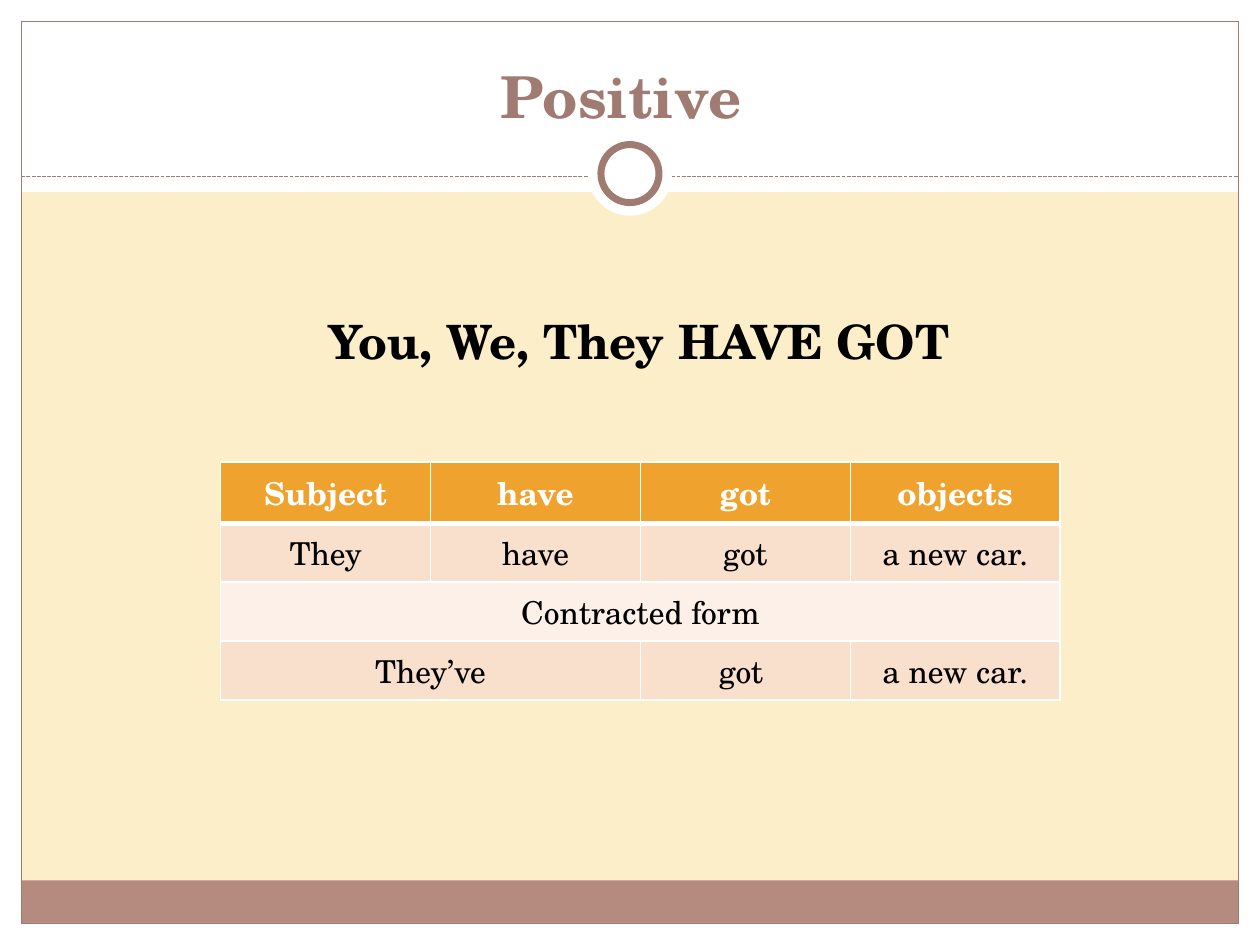
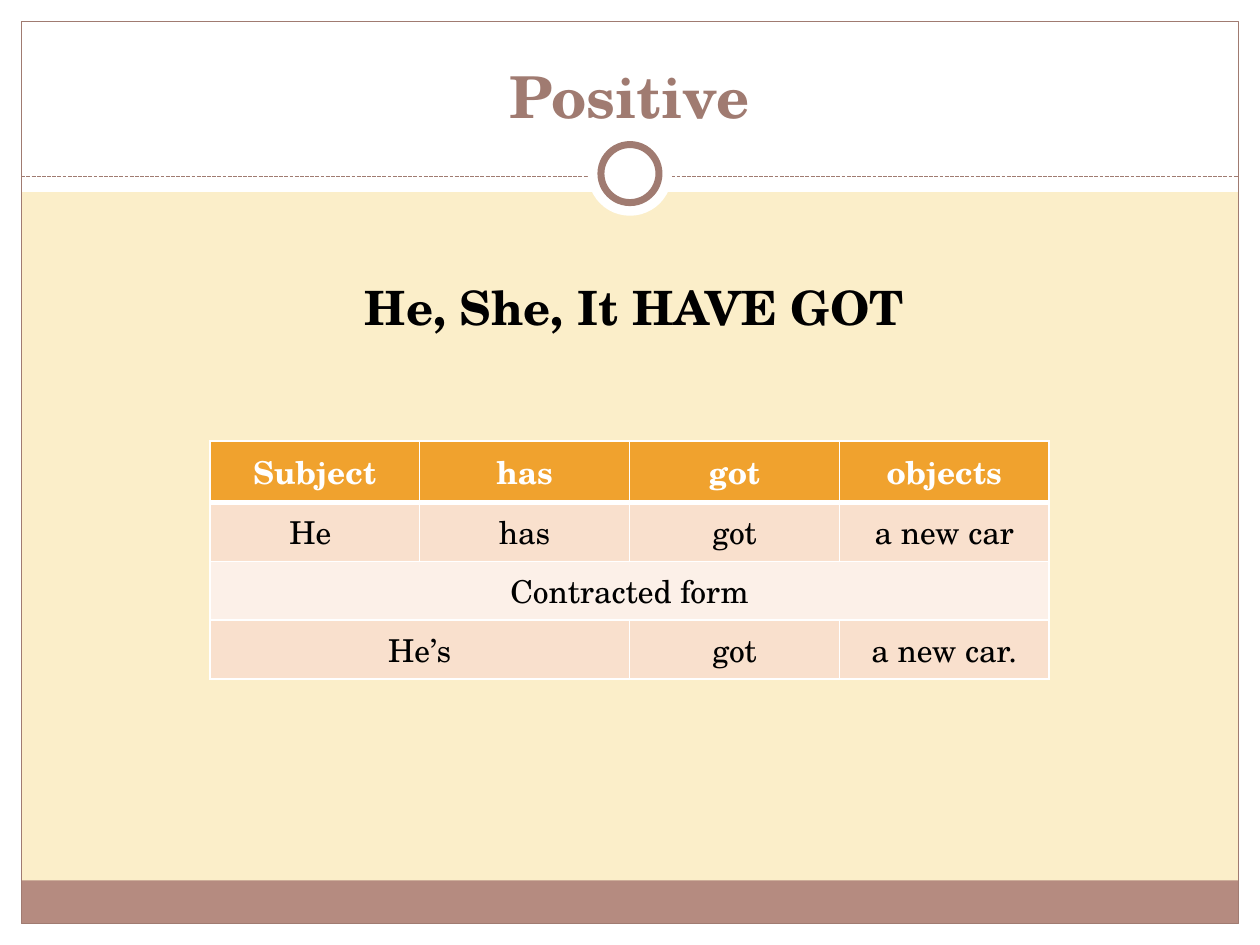
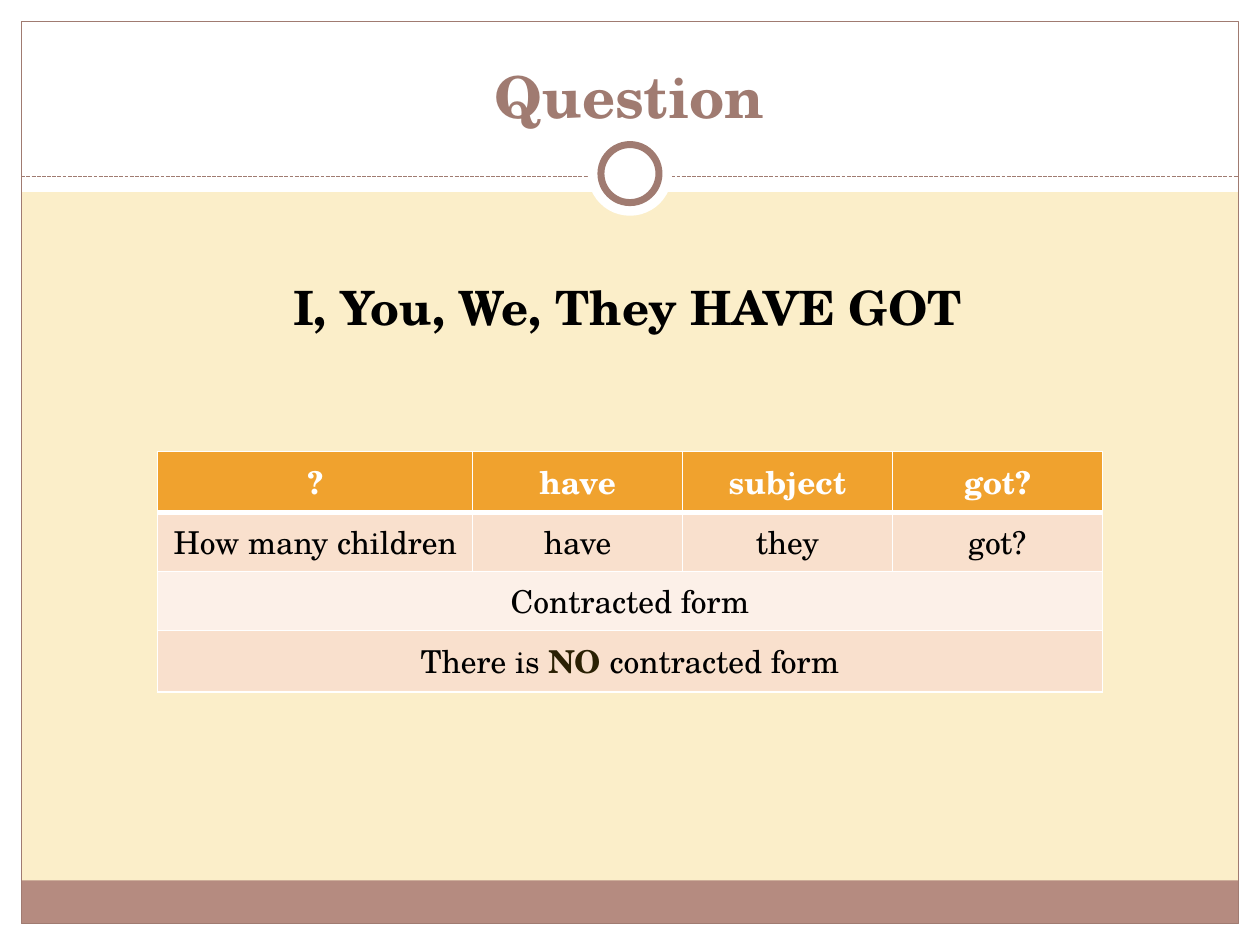
from lxml.etree import SubElement
from pptx import Presentation
from pptx.dml.color import RGBColor
from pptx.enum.dml import MSO_LINE
from pptx.enum.shapes import MSO_CONNECTOR, MSO_SHAPE
from pptx.enum.text import MSO_ANCHOR, MSO_AUTO_SIZE, PP_ALIGN
from pptx.oxml import parse_xml
from pptx.oxml.ns import nsdecls, qn
from pptx.util import Cm, Pt

WIDTH, HEIGHT, MARGIN = 25.4, 19.05, 0.43
FONT = "TeX Gyre Schola"
WHITE, BLACK, CREAM = "FFFFFF", "000000", "FBEEC9"
BROWN, ROSE, OLIVE = "A07B71", "B58B80", "2A2003"
ORANGE, PEACH, PALE = "F0A22E", "F9E0CD", "FCF0E8"
COLUMN, HEADER_ROW, ROW = 4.23, 1.2, 1.18


def rgb(value):
    return RGBColor.from_string(value)


class GrammarDeck:
    """Holds the shared style and the current slide of the grammar lesson."""

    def __init__(self):
        self.prs = Presentation()
        self.prs.slide_width, self.prs.slide_height = Cm(WIDTH), Cm(HEIGHT)
        self.layout = self.prs.slide_layouts[1]
        background = self.prs.slide_master.background.fill
        background.solid()
        background.fore_color.rgb = rgb(CREAM)
        self.slide = None

    def new_slide(self):
        self.slide = self.prs.slides.add_slide(self.layout)
        if len(self.prs.slides) == 1:
            self.frame_layout()

    def frame_layout(self):
        inner_width, inner_height = WIDTH - 2 * MARGIN, HEIGHT - 2 * MARGIN
        right, bottom = WIDTH - MARGIN, HEIGHT - MARGIN
        footer_height, ring_center = 0.87, 3.5
        rectangle = MSO_SHAPE.RECTANGLE
        decoration = [
            self.shape(rectangle, 0, bottom, WIDTH, MARGIN, WHITE),
            self.shape(rectangle, 0, 0, WIDTH, 3.87, WHITE),
            self.shape(rectangle, 0, 0, MARGIN, HEIGHT, WHITE),
            self.shape(rectangle, right, 0, MARGIN, HEIGHT, WHITE),
            self.shape(rectangle, MARGIN, bottom - footer_height, inner_width, footer_height, ROSE),
            self.shape(rectangle, MARGIN, MARGIN, inner_width, inner_height, line=BROWN),
            self.dashed_rule(MARGIN, right, 3.56),
            self.circle(ring_center, 1.7),
            self.circle(ring_center, 1.17, BROWN, 4),
        ]
        tree = self.layout.shapes.element
        for index, part in enumerate(decoration):
            part.element.xpath(".//p:cNvPr")[0].set("id", str(100 + index))
            tree.insert(2 + index, part.element)

    def shape(self, preset, left, top, width, height, fill=None, line=None, weight=0.75):
        shape = self.slide.shapes.add_shape(preset, Cm(left), Cm(top), Cm(width), Cm(height))
        shape.shadow.inherit = False
        if fill:
            shape.fill.solid()
            shape.fill.fore_color.rgb = rgb(fill)
        else:
            shape.fill.background()
        if line:
            shape.line.color.rgb = rgb(line)
            shape.line.width = Pt(weight)
        else:
            shape.line.fill.background()
        return shape

    def circle(self, center, diameter, line=None, weight=0.75):
        left, top = (WIDTH - diameter) / 2, center - diameter / 2
        return self.shape(MSO_SHAPE.OVAL, left, top, diameter, diameter, WHITE, line, weight)

    def dashed_rule(self, left, right, top):
        rule = self.slide.shapes.add_connector(
            MSO_CONNECTOR.STRAIGHT, Cm(left), Cm(top), Cm(right), Cm(top))
        rule.line.color.rgb = rgb(BROWN)
        rule.line.width = Pt(0.75)
        rule.line.dash_style = MSO_LINE.SQUARE_DOT
        SubElement(rule.element.spPr, qn("a:effectLst"))
        return rule

    def style(self, paragraph, size, color, bold):
        paragraph.alignment = PP_ALIGN.CENTER
        for run in paragraph.runs:
            run.font.name, run.font.size, run.font.bold = FONT, Pt(size), bold
            run.font.color.rgb = rgb(color)

    def fill_placeholder(self, placeholder, text, box, size, color):
        placeholder.left, placeholder.top, placeholder.width, placeholder.height = map(Cm, box)
        frame = placeholder.text_frame
        frame.text = text
        frame.auto_size = MSO_AUTO_SIZE.NONE
        self.style(frame.paragraphs[0], size, color, True)
        return frame

    def title(self, text):
        frame = self.fill_placeholder(
            self.slide.shapes.title, text, (0.84, 0.64, 23.7, 2.11), 33, BROWN)
        frame.vertical_anchor = MSO_ANCHOR.BOTTOM

    def pronouns(self, text, left, top, inset):
        frame = self.fill_placeholder(
            self.slide.placeholders[1], text, (left, top, 23.62, 12.7), 27, BLACK)
        frame.margin_top = Cm(inset)
        paragraph = frame.paragraphs[0]
        paragraph.space_before = Pt(0)
        SubElement(paragraph._p.get_or_add_pPr(), qn("a:buNone"))

    def table(self, left, top, rows, first_column=COLUMN):
        widths = [first_column] + [COLUMN] * (len(rows[0]) - 1)
        heights = [HEADER_ROW] + [ROW] * (len(rows) - 1)
        table = self.slide.shapes.add_table(
            len(rows), len(widths), Cm(left), Cm(top), Cm(sum(widths)), Cm(sum(heights))).table
        for column, width in zip(table.columns, widths):
            column.width = Cm(width)
        for r, texts in enumerate(rows):
            table.rows[r].height = Cm(heights[r])
            for c, text in enumerate(texts):
                cell = table.cell(r, c)
                self.cell_look(cell, r)
                if text is None:
                    continue
                end = c
                while end + 1 < len(texts) and texts[end + 1] is None:
                    end += 1
                if end > c:
                    cell.merge(table.cell(r, end))
                self.cell_text(cell, text, r == 0)

    def cell_text(self, cell, text, header):
        parts = [text] if isinstance(text, str) else text
        paragraph = cell.text_frame.paragraphs[0]
        for part in parts:
            paragraph.add_run().text = part
        self.style(paragraph, 18, WHITE if header else BLACK, header)
        for emphasis in paragraph.runs[1::2]:
            emphasis.font.bold = True
            emphasis.font.color.rgb = rgb(OLIVE)

    def cell_look(self, cell, row):
        cell.vertical_anchor = MSO_ANCHOR.MIDDLE
        cell.fill.solid()
        cell.fill.fore_color.rgb = rgb((ORANGE, PEACH, PALE, PEACH)[row])
        weights = {"L": 1, "R": 1, "T": 3 if row == 1 else 1, "B": 3 if row == 0 else 1}
        for index, (side, weight) in enumerate(weights.items()):
            border = parse_xml(
                f'<a:ln{side} {nsdecls("a")} w="{Pt(weight)}"><a:solidFill>'
                f'<a:srgbClr val="{WHITE}"/></a:solidFill></a:ln{side}>')
            cell._tc.get_or_add_tcPr().insert(index, border)


def main():
    deck = GrammarDeck()

    deck.new_slide()
    deck.title("Positive ")
    deck.pronouns("You, We, They HAVE GOT", 1.07, 3.61, 2.69)
    deck.table(4.45, 9.31, [
        ["Subject", "have", "got", "objects"],
        ["They", "have", "got", "a new car."],
        ["Contracted form", None, None, None],
        ["They’ve", None, "got ", "a new car."],
    ])

    deck.new_slide()
    deck.title("Positive")
    deck.pronouns(" He, She, It HAVE GOT", 0.84, 4.24, 1.37)
    deck.table(4.23, 8.89, [
        ["Subject", "has", "got", "objects"],
        ["He ", "has", "got", "a new car"],
        ["Contracted form", None, None, None],
        ["He’s", None, "got", "a new car."],
    ])

    deck.new_slide()
    deck.title("Question")
    deck.pronouns("I, You, We, They HAVE GOT", 0.84, 4.24, 1.37)
    deck.table(3.18, 9.1, [
        ["?", "have", "subject", "got?"],
        ["How many children", "have", "they", "got?"],
        ["Contracted form", None, None, None],
        [("There is ", "NO ", "contracted form"), None, None, None],
    ], first_column=6.35)

    deck.prs.save("out.pptx")


if __name__ == "__main__":
    main()
